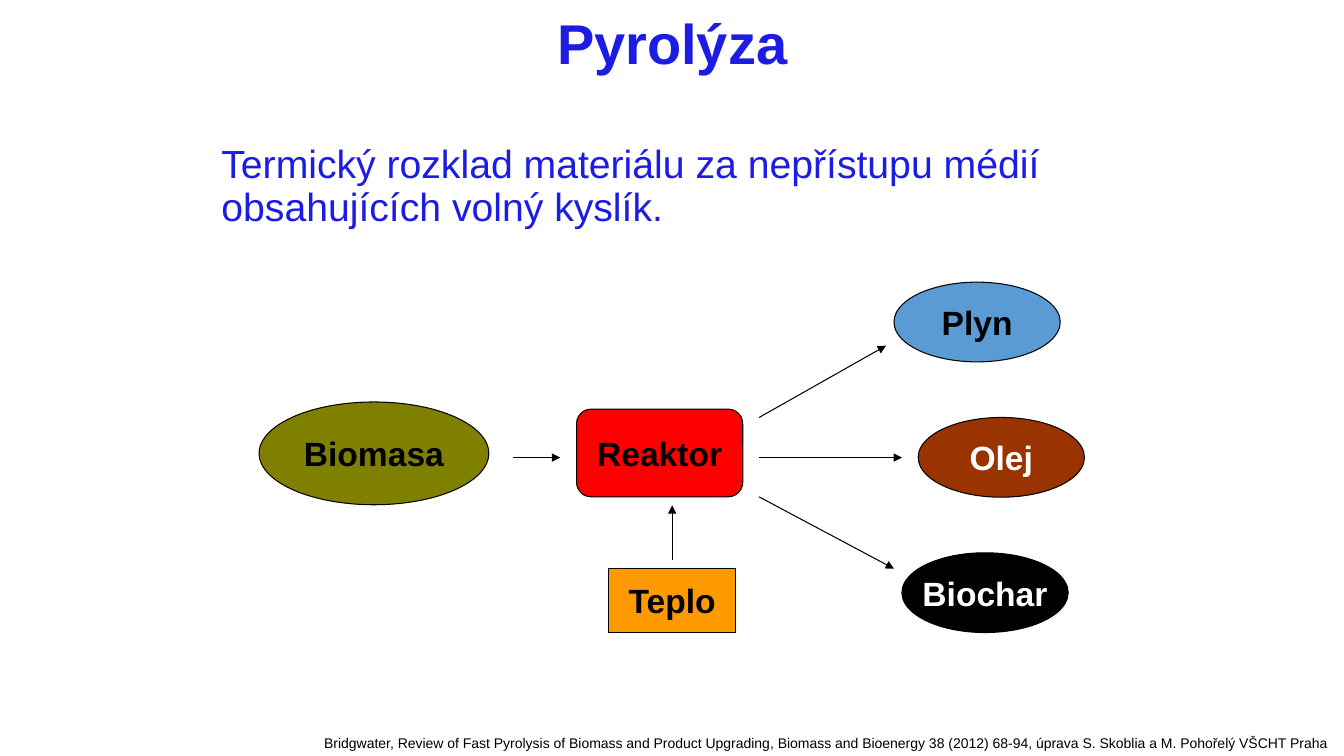
"""Build the pyrolysis slide: biomass and heat enter a reactor, three products leave it."""
from typing import NamedTuple

from lxml.etree import SubElement
from pptx import Presentation
from pptx.dml.color import RGBColor
from pptx.enum.shapes import MSO_CONNECTOR as Link, MSO_SHAPE as Form
from pptx.enum.text import MSO_ANCHOR as Anchor, PP_ALIGN as Align
from pptx.oxml.ns import qn
from pptx.util import Cm, Pt

FONT = "Arial"
COLORS = {
    "blue": "1C1CE2", "black": "000000", "white": "FFFFFF", "red": "FF0000",
    "olive": "808000", "sky": "5B9BD5", "brown": "993300", "orange": "FF9900",
}


class Node(NamedTuple):
    text: str
    form: Form
    left: float
    top: float
    width: float
    height: float
    fill: str
    ink: str = "black"


class Arrow(NamedTuple):
    x1: float
    y1: float
    x2: float
    y2: float


class Label(NamedTuple):
    text: str
    left: float
    top: float
    width: float
    height: float
    size: int
    ink: str
    bold: bool = False
    align: Align = Align.LEFT
    anchor: Anchor = Anchor.TOP
    space: float = 1.0
    before: int = 0


AXIS = 11.53
EXIT = 19.13
MID = 16.94
TOP, STEP = 7.11, 3.41

PRODUCTS = [
    Node(text, Form.OVAL, left, TOP + row * STEP, 4.19, 2.01, fill, ink)
    for row, (text, left, fill, ink) in enumerate([
        ("Plyn", 22.53, "sky", "black"),
        ("Olej", 23.14, "brown", "white"),
        ("Biochar", 22.73, "black", "white"),
    ])
]
NODES = [
    Node("Reaktor", Form.ROUNDED_RECTANGLE, 14.53, 10.31, 4.19, 2.21, "red"),
    Node("Biomasa", Form.OVAL, 6.53, 10.13, 5.79, 2.59, "olive"),
    Node("Teplo", Form.RECTANGLE, 15.34, 14.33, 3.2, 1.6, "orange"),
    *PRODUCTS,
]
ARROWS = [
    Arrow(12.93, AXIS, 14.12, AXIS),
    Arrow(EXIT, 10.52, 22.33, 8.71),
    Arrow(EXIT, AXIS, 22.73, AXIS),
    Arrow(EXIT, 12.52, 22.53, 14.33),
    Arrow(MID, 14.12, MID, 12.73),
]
LABELS = [
    Label("Pyrolýza", 4.24, 0, 25.4, 2.13, 40, "blue", True, Align.CENTER, Anchor.MIDDLE),
    Label("Termický rozklad materiálu za nepřístupu médií obsahujících volný kyslík.",
          5.33, 3.53, 22.45, 3.07, 28, "blue", space=0.9, before=10),
    Label("Bridgwater, Review of Fast Pyrolysis of Biomass and Product Upgrading, "
          "Biomass and Bioenergy 38 (2012) 68-94, úprava S. Skoblia a M. Pohořelý VŠCHT Praha",
          7.92, 18.39, 25.93, 0.69, 10, "black"),
]


def color(name: str) -> RGBColor:
    """Return a named colour."""
    return RGBColor.from_string(COLORS[name])


def style(para, size: int, ink: str, bold: bool, align: Align) -> None:
    """Set the font and alignment of a paragraph."""
    para.alignment = align
    font = para.font
    font.name, font.size, font.bold = FONT, Pt(size), bold
    font.color.rgb = color(ink)


def stroke(line) -> None:
    """Give a line the thin black stroke."""
    line.color.rgb = color("black")
    line.width = Pt(0.75)


def draw_node(shapes, node: Node) -> None:
    """Draw a filled shape with its name."""
    shape = shapes.add_shape(node.form, Cm(node.left), Cm(node.top),
                             Cm(node.width), Cm(node.height))
    shape.shadow.inherit = False
    shape.fill.solid()
    shape.fill.fore_color.rgb = color(node.fill)
    stroke(shape.line)
    frame = shape.text_frame
    frame.text = node.text
    frame.word_wrap = False
    frame.vertical_anchor = Anchor.MIDDLE
    style(frame.paragraphs[0], 24, node.ink, True, Align.CENTER)


def draw_arrow(shapes, arrow: Arrow) -> None:
    """Draw a straight arrow."""
    link = shapes.add_connector(Link.STRAIGHT, *(Cm(n) for n in arrow))
    stroke(link.line)
    SubElement(link.line._get_or_add_ln(), qn("a:tailEnd"), type="triangle")
    SubElement(link._element.spPr, qn("a:effectLst"))


def draw_label(shapes, label: Label) -> None:
    """Draw a text box."""
    box = shapes.add_textbox(Cm(label.left), Cm(label.top), Cm(label.width), Cm(label.height))
    frame = box.text_frame
    frame.text = label.text
    frame.word_wrap = True
    frame.vertical_anchor = label.anchor
    para = frame.paragraphs[0]
    para.line_spacing = label.space
    para.space_before = Pt(label.before)
    style(para, label.size, label.ink, label.bold, label.align)


def main() -> None:
    """Build and save the slide."""
    deck = Presentation()
    deck.slide_width, deck.slide_height = Cm(33.87), Cm(19.05)
    shapes = deck.slides.add_slide(deck.slide_layouts[6]).shapes
    for node in NODES:
        draw_node(shapes, node)
    for arrow in ARROWS:
        draw_arrow(shapes, arrow)
    for label in LABELS:
        draw_label(shapes, label)
    deck.save("out.pptx")


if __name__ == "__main__":
    main()
